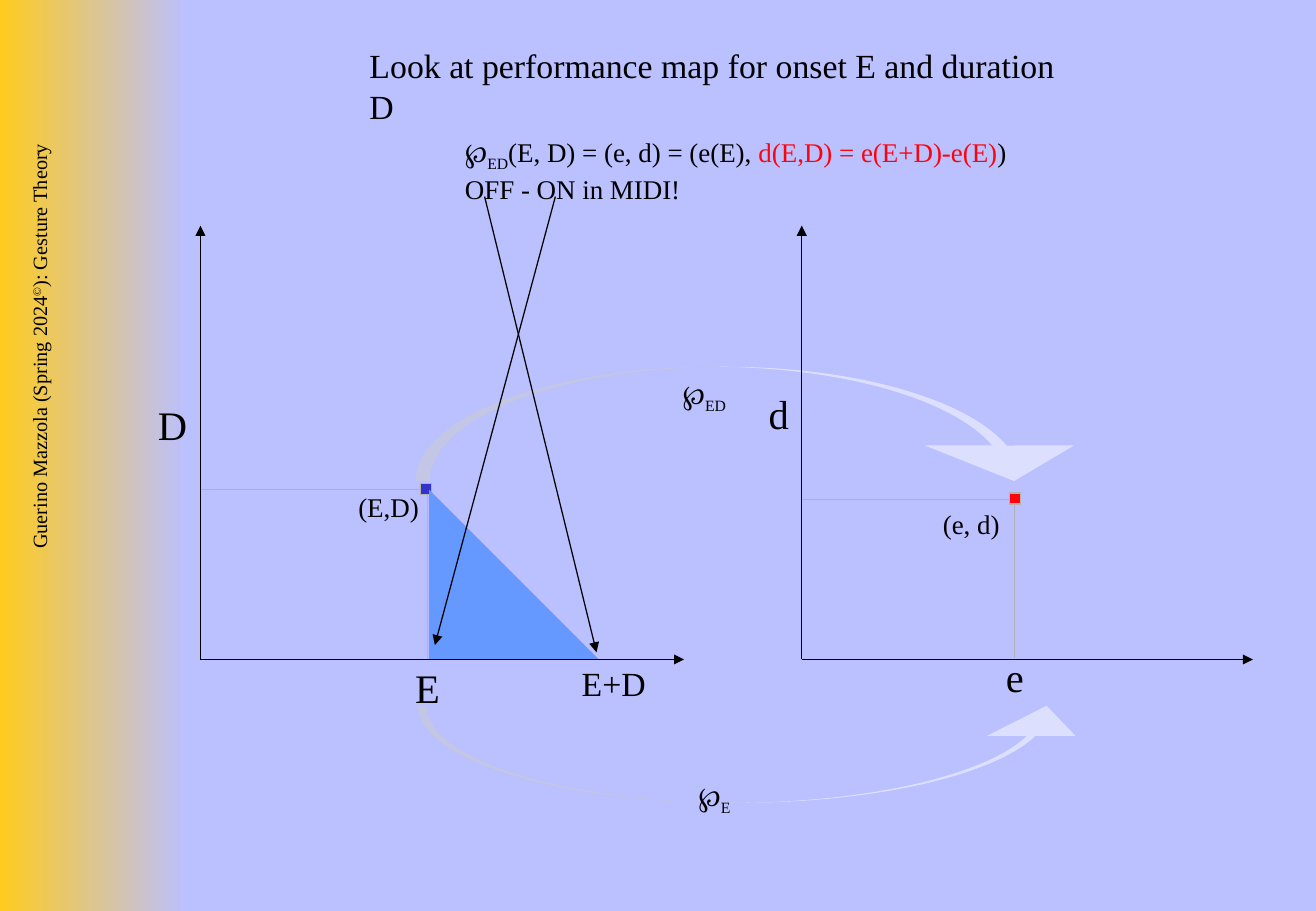
from lxml import etree
from pptx import Presentation
from pptx import util as u
from pptx.dml.color import RGBColor
from pptx.enum import shapes, text
from pptx.oxml.ns import qn

BLACK, GREY, RED, LAVENDER = "000000", "B2B2B2", "FF020B", "BBC0FF"


def color(hex_value):
    return RGBColor.from_string(hex_value)


def write(paragraph, words, size=16, font="Times New Roman", fill=BLACK, baseline=0):
    run = paragraph.add_run()
    run.text = words
    run.font.size = u.Pt(size)
    run.font.name = font
    run.font.color.rgb = color(fill)
    if baseline:
        run.font._element.set("baseline", str(baseline * 1000))


presentation = Presentation()
presentation.slide_width, presentation.slide_height = u.Cm(27.51), u.Cm(19.05)
slide = presentation.slides.add_slide(presentation.slide_layouts[5])
slide.background.fill.solid()
slide.background.fill.fore_color.rgb = color(LAVENDER)

# Title
title = slide.shapes.title
title.left, title.top, title.width, title.height = map(u.Cm, (7.47, 0.81, 15.2, 1.09))
title.text_frame.word_wrap = True
title.text_frame.auto_size = text.MSO_AUTO_SIZE.NONE
title.text_frame.vertical_anchor = text.MSO_ANCHOR.TOP
title_paragraph = title.text_frame.paragraphs[0]
title_paragraph.alignment = text.PP_ALIGN.LEFT
write(title_paragraph, "Look at performance map for onset E and duration D", size=20)

# Gradient band with the course name
band = slide.shapes.add_shape(shapes.MSO_SHAPE.RECTANGLE, 0, 0, u.Cm(3.91), u.Cm(19.05))
band.shadow.inherit = False
band.line.fill.background()
band.fill.gradient()
band.fill.gradient_angle = 0
for stop, shade, position in zip(band.fill.gradient_stops, ("FFCB1F", LAVENDER), (0, 1)):
    stop.color.rgb = color(shade)
    stop.position = position

course = slide.shapes.add_textbox(u.Cm(-6.1), u.Cm(9.3), u.Cm(14.35), u.Cm(1.27))
course.rotation = 270
course.text_frame.word_wrap = True
course_paragraph = course.text_frame.paragraphs[0]
course_paragraph.alignment = text.PP_ALIGN.RIGHT
write(course_paragraph, "Guerino Mazzola (Spring 2024", size=12)
write(course_paragraph, "©", size=12, baseline=30)
write(course_paragraph, "): Gesture Theory", size=12)

# Guide lines from the axes to the two points
for left, top, right, bottom in ((4.19, 10.24, 8.94, 13.79), (16.74, 10.44, 21.21, 13.77)):
    builder = slide.shapes.build_freeform(u.Cm(left), u.Cm(top))
    builder.add_line_segments(
        [(u.Cm(right), u.Cm(top)), (u.Cm(right), u.Cm(bottom))], close=False)
    guide = builder.convert_to_shape()
    guide.shadow.inherit = False
    guide.fill.background()
    guide.line.color.rgb = color(GREY)
    guide.line.width = u.Pt(0.75)

# Points, map arrows and the duration triangle
ARROW = shapes.MSO_SHAPE.CURVED_DOWN_ARROW
figures = [
    (shapes.MSO_SHAPE.RECTANGLE, (8.79, 10.11, 0.23, 0.23), "3333CC", GREY, ()),
    (shapes.MSO_SHAPE.RECTANGLE, (21.11, 10.31, 0.23, 0.23), RED, GREY, ()),
    (ARROW, (8.69, 7.67, 14.07, 2.39), "FFFFFF", None, (0.125, 1.306, 0.311)),
    (ARROW, (8.74, 14.76, 14.07, 2.03), "FFFFFF", None, (0.087, 0.916, 0.311)),
    (shapes.MSO_SHAPE.RIGHT_TRIANGLE, (8.97, 10.24, 3.56, 3.56), "6699FF", None, ()),
]
for kind, box, fill, outline, adjustments in figures:
    figure = slide.shapes.add_shape(kind, *map(u.Cm, box))
    figure.shadow.inherit = False
    figure.fill.solid()
    figure.fill.fore_color.rgb = color(fill)
    if outline:
        figure.line.color.rgb = color(outline)
        figure.line.width = u.Pt(0.75)
    else:
        figure.line.fill.background()
    for index, value in enumerate(adjustments):
        figure.adjustments[index] = value
    if kind == ARROW:
        solid = figure.element.spPr.find(qn("a:solidFill"))
        etree.SubElement(solid[0], qn("a:alpha")).set("val", "50000")
        if box[1] > 13.79:  # the arrow below the axes points upwards
            figure.element.spPr.find(qn("a:xfrm")).set("flipV", "1")

# Axes and the pointers from ON and OFF
arrows = [
    (4.19, 13.79, 4.19, 4.72),
    (4.19, 13.79, 14.3, 13.79),
    (16.76, 13.79, 16.76, 4.72),
    (16.76, 13.79, 26.19, 13.79),
    (11.61, 4.11, 9.09, 13.49),
    (10.13, 4.11, 12.47, 13.64),
]
for ends in arrows:
    arrow = slide.shapes.add_connector(shapes.MSO_CONNECTOR.STRAIGHT, *map(u.Cm, ends))
    arrow.line.color.rgb = color(BLACK)
    arrow.line.width = u.Pt(0.75)
    properties = arrow.element.spPr
    etree.SubElement(properties.find(qn("a:ln")), qn("a:tailEnd")).set("type", "triangle")
    etree.SubElement(properties, qn("a:effectLst"))

# Plain labels
labels = [
    ("E", 24, (8.43, 13.74, 1.02, 1.27)),
    ("D", 24, (3.05, 8.23, 1.12, 1.27)),
    ("e", 24, (20.78, 13.51, 0.89, 1.27)),
    ("d", 24, (15.82, 8.0, 0.94, 1.27)),
    ("(E,D)", 16, (7.24, 10.13, 1.88, 0.94)),
    ("(e, d)", 16, (19.46, 10.49, 1.75, 0.94)),
    ("E+D", 20, (11.91, 13.74, 2.03, 1.09)),
]
for words, size, box in labels:
    label = slide.shapes.add_textbox(*map(u.Cm, box))
    label.text_frame.word_wrap = False
    write(label.text_frame.paragraphs[0], words, size=size)

# Performance map symbols; the last one opens the formula
symbols = [
    ("E", (14.35, 16.18, 1.3, 0.94)),
    ("ED", (14.02, 7.77, 1.57, 0.94)),
    ("ED", (9.47, 2.72, 11.99, 1.63)),
]
for subscript, box in symbols:
    symbol = slide.shapes.add_textbox(*map(u.Cm, box))
    symbol.text_frame.word_wrap = False
    formula = symbol.text_frame.paragraphs[0]
    write(formula, "℘", font="Cambria")
    write(formula, subscript, baseline=-25)

write(formula, "(E, D) = (e, d) = (e(E), ")
write(formula, "d(E,D) = e(E+D)-e(E)", fill=RED)
write(formula, ")")
write(symbol.text_frame.add_paragraph(), "OFF - ON in MIDI!")

presentation.save("out.pptx")
